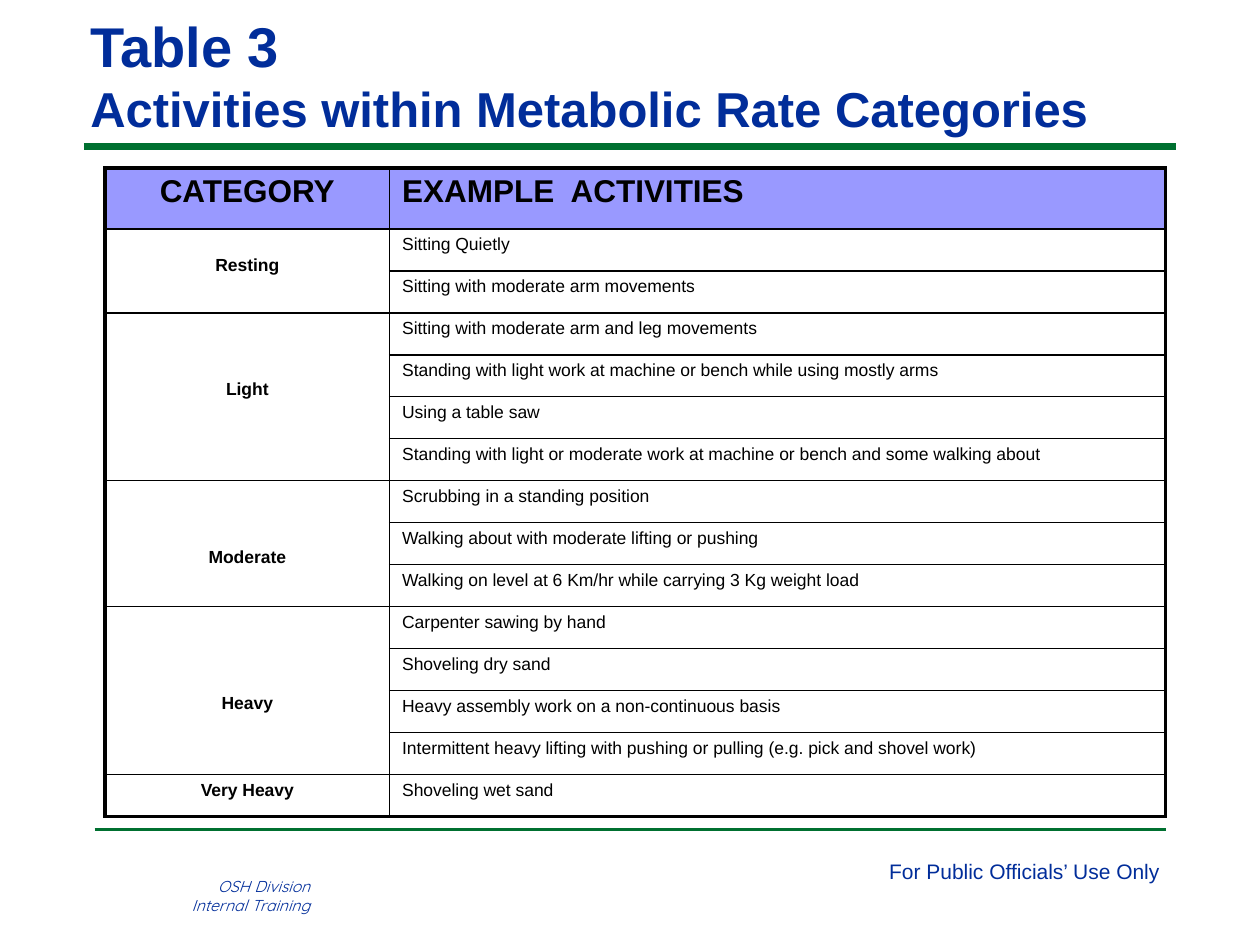
from dataclasses import dataclass

from lxml import etree
from pptx import Presentation
from pptx.dml.color import RGBColor
from pptx.enum.shapes import MSO_CONNECTOR
from pptx.enum.text import MSO_ANCHOR, PP_ALIGN
from pptx.oxml.ns import qn
from pptx.util import Inches, Pt

STRAIGHT = MSO_CONNECTOR.STRAIGHT
LEFT, CENTER, RIGHT = PP_ALIGN.LEFT, PP_ALIGN.CENTER, PP_ALIGN.RIGHT
TOP, MIDDLE = MSO_ANCHOR.TOP, MSO_ANCHOR.MIDDLE
TITLE_ONLY = 5
GRID_STEPS_PER_INCH = 12
ROW_STEPS = 4
CELL_PADDING = 0.05
LINE_HEIGHT = 0.16


@dataclass(frozen=True)
class Theme:
    navy: str = "012D9A"
    green: str = "007030"
    black: str = "000000"
    lilac: str = "9999FF"
    font: str = "Arial"
    division_font: str = "Quicksand"
    title_size: int = 32
    subtitle_size: int = 28
    header_size: int = 18
    notice_size: int = 12
    cell_size: int = 10
    division_size: int = 9
    frame_width: float = 2.25
    rule_width: float = 1


THEME = Theme()

HEADERS = ["CATEGORY", "EXAMPLE  ACTIVITIES"]
CATEGORIES = [
    ("Resting", 1, ["Sitting Quietly", "Sitting with moderate arm movements"]),
    ("Light", 3, [
        "Sitting with moderate arm and leg movements",
        "Standing with light work at machine or bench while using mostly arms",
        "Using a table saw",
        "Standing with light or moderate work at machine or bench and some walking about",
    ]),
    ("Moderate", 3, [
        "Scrubbing in a standing position",
        "Walking about with moderate lifting or pushing",
        "Walking on level at 6 Km/hr while carrying 3 Kg weight load",
    ]),
    ("Heavy", 4, [
        "Carpenter sawing by hand",
        "Shoveling dry sand",
        "Heavy assembly work on a non-continuous basis",
        "Intermittent heavy lifting with pushing or pulling (e.g. pick and shovel work)",
    ]),
    ("Very Heavy", 0, ["Shoveling wet sand"]),
]


def grid(*steps):
    return [Inches(step / GRID_STEPS_PER_INCH) for step in steps]


def style_font(font, size, color, name=THEME.font, bold=False, italic=False):
    font.name = name
    font.size = Pt(size)
    font.bold = bold
    font.italic = italic
    font.color.rgb = RGBColor.from_string(color)


def add_rule(page, left, right, row, width):
    rule = page.shapes.add_connector(STRAIGHT, *grid(left, row, right, row))
    rule.line.color.rgb = RGBColor.from_string(THEME.green)
    rule.line.width = Pt(width)
    etree.SubElement(rule._element.spPr, qn("a:effectLst"))


def add_label(page, area, lines, align, size, **style):
    frame = page.shapes.add_textbox(*grid(*area)).text_frame
    frame.word_wrap = False
    frame.text = "\n".join(lines)
    for para in frame.paragraphs:
        para.alignment = align
        style_font(para.font, size, THEME.navy, **style)


def set_title(page):
    title = page.shapes.title
    title.left, title.top, title.width, title.height = grid(8, 1, 108, 12.1)
    frame = title.text_frame
    frame.word_wrap = True
    frame.vertical_anchor = MIDDLE
    frame.margin_left = frame.margin_right = Inches(0.05)
    frame.margin_top = frame.margin_bottom = 0
    para = frame.paragraphs[0]
    para.alignment = LEFT
    style_font(para.font, THEME.title_size, THEME.navy, bold=True)
    para.add_run().text = "Table 3 "
    para.add_line_break()
    span = para.add_run()
    span.text = "Activities within Metabolic Rate Categories"
    span.font.size = Pt(THEME.subtitle_size)


def set_borders(cell, framed_sides):
    properties = cell._tc.get_or_add_tcPr()
    for side in "LRTB":
        width = THEME.frame_width if side in framed_sides else THEME.rule_width
        line = etree.SubElement(properties, qn(f"a:ln{side}"), w=str(Pt(width)))
        fill = etree.SubElement(line, qn("a:solidFill"))
        etree.SubElement(fill, qn("a:srgbClr"), val=THEME.black)


def format_cells(table):
    last_row = len(table.rows) - 1
    for row_index, row in enumerate(table.rows):
        for column_index, cell in enumerate(row.cells):
            framed = "LR"[column_index]
            framed += "T" if row_index == 0 else ""
            framed += "B" if row_index == last_row else ""
            set_borders(cell, framed)
            if row_index == 0:
                cell.fill.solid()
                cell.fill.fore_color.rgb = RGBColor.from_string(THEME.lilac)
            else:
                cell.fill.background()


def write_cell(cell, text, size, align=LEFT, bold=False, lines_down=0):
    cell.text = text
    cell.vertical_anchor = TOP
    cell.margin_top = Inches(CELL_PADDING + lines_down * LINE_HEIGHT)
    para = cell.text_frame.paragraphs[0]
    para.alignment = align
    style_font(para.font, size, THEME.black, bold=bold)


def add_activity_table(page):
    row_count = 1 + sum(len(activities) for _, _, activities in CATEGORIES)
    area = grid(10, 16, 101, 61.8)
    table = page.shapes.add_table(row_count, len(HEADERS), *area).table
    table.first_row = table.horz_banding = False
    for column, width in zip(table.columns, grid(27.1, 73.9)):
        column.width = width
    for row, height in zip(table.rows, grid(5.8, *[ROW_STEPS] * (row_count - 1))):
        row.height = height
    format_cells(table)
    for index, (header, align) in enumerate(zip(HEADERS, (CENTER, LEFT))):
        write_cell(table.cell(0, index), header, THEME.header_size, align, bold=True)
    first = 1
    for category, lines_down, activities in CATEGORIES:
        for offset, activity in enumerate(activities):
            write_cell(table.cell(first + offset, 1), activity, THEME.cell_size)
            style_font(table.cell(first + offset, 0).text_frame.paragraphs[0].font,
                       THEME.cell_size, THEME.black)
        cell = table.cell(first, 0)
        if len(activities) > 1:
            cell.merge(table.cell(first + len(activities) - 1, 0))
        write_cell(cell, category, THEME.cell_size, CENTER, True, lines_down)
        first += len(activities)


def main():
    deck = Presentation()
    deck.slide_width, deck.slide_height = grid(120, 90)
    page = deck.slides.add_slide(deck.slide_layouts[TITLE_ONLY])
    add_rule(page, 8, 112, 14, width=4)
    add_rule(page, 9, 111, 79, width=2)
    add_label(page, (83.5, 81.2, 28.4, 3.6), ["For Public Officials’ Use Only"],
              LEFT, THEME.notice_size)
    add_label(page, (14, 82.9, 16.7, 5.9), ["OSH Division", "Internal Training"],
              RIGHT, THEME.division_size, name=THEME.division_font, italic=True)
    set_title(page)
    add_activity_table(page)
    deck.save("out.pptx")


if __name__ == "__main__":
    main()
